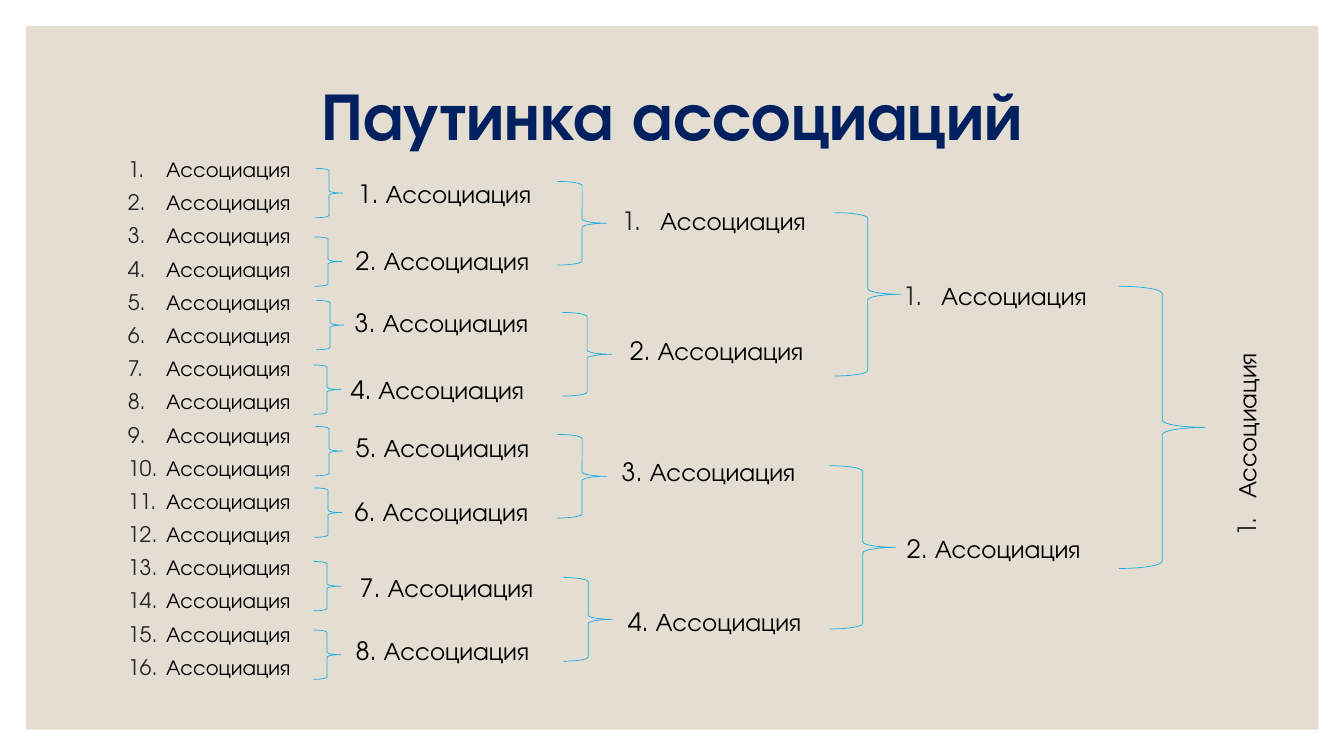
"""Builds the slide with a knockout web of associations."""
from lxml import etree
from pptx import Presentation
from pptx.dml.color import RGBColor
from pptx.enum.shapes import MSO_SHAPE
from pptx.enum.text import MSO_ANCHOR, PP_ALIGN
from pptx.oxml.ns import qn
from pptx.util import Emu, Pt

RECT, BRACE = MSO_SHAPE.RECTANGLE, MSO_SHAPE.RIGHT_BRACE
TOP, MID = MSO_ANCHOR.TOP, MSO_ANCHOR.MIDDLE
LEFT, CENTER = PP_ALIGN.LEFT, PP_ALIGN.CENTER

TITLE = "Паутинка ассоциаций"
WORD = "Ассоциация"
FONT = "TeX Gyre Adventor"
COLORS = {"panel": "E3DED1", "title": "002060", "text": "000000",
          "number": "262626", "brace": "1CADE4"}
COUNT = 16
INDENT = 38
PANEL = (26, 26, 1282, 698)
HEAD = (117, 43, 1100, 150)
LIST = (117, 155, 1100, 536)
LABEL = (273, 49)
FINAL = (1106, 383, 270, 49)
ROUNDS = [
    {"size": (27, 49), "auto": False,
     "braces": [(313, 167), (312, 235), (314, 298), (311, 362),
                (313, 423), (312, 484), (311, 557), (311, 625)],
     "labels": [(345, 172), (343, 238), (342, 300), (338, 366),
                (343, 424), (342, 487), (347, 563), (343, 625)]},
    {"size": (49, 83), "auto": True,
     "braces": [(553, 180), (558, 310), (553, 431), (559, 573)],
     "labels": [(607, 199), (615, 328), (607, 448), (613, 597)]},
    {"size": (66, 162), "auto": True,
     "braces": [(828, 211), (823, 462)],
     "labels": [(886, 273), (890, 524)]},
    {"size": (86, 280), "auto": True, "braces": [(1110, 284)], "labels": []},
]

PX = 9144


def emu(box):
    return [Emu(n * PX) for n in box]


def rgb(name):
    return RGBColor.from_string(COLORS[name])


def put(obj, form):
    for key, val in form.items():
        setattr(obj, key, val)


def number(para):
    props = para._p.get_or_add_pPr()
    props.set("marL", str(INDENT * PX))
    props.set("indent", str(-INDENT * PX))
    tint = etree.SubElement(props, qn("a:buClr"))
    etree.SubElement(tint, qn("a:srgbClr"), val=COLORS["number"])
    etree.SubElement(props, qn("a:buFont"), typeface="+mj-lt")
    etree.SubElement(props, qn("a:buAutoNum"), type="arabicPeriod")


def write(slide, box, lines, size=18, color="text", bold=False, auto=False,
          anchor=TOP, **form):
    shape = slide.shapes.add_textbox(*emu(box))
    frame = shape.text_frame
    put(frame, {"word_wrap": True, "vertical_anchor": anchor})
    frame.text = "\n".join(lines)
    for para in frame.paragraphs:
        put(para, {"alignment": LEFT, "space_before": Pt(9), **form})
        if auto:
            number(para)
        font = para.runs[0].font
        put(font, {"name": FONT, "size": Pt(size), "bold": bold})
        font.color.rgb = rgb(color)
    return shape


def draw(slide, kind, box):
    shape = slide.shapes.add_shape(kind, *emu(box))
    shape.shadow.inherit = False
    return shape


def main():
    deck = Presentation()
    put(deck, {"slide_width": Emu(12192000), "slide_height": Emu(6858000)})
    slide = deck.slides.add_slide(deck.slide_layouts[6])

    panel = draw(slide, RECT, PANEL)
    panel.fill.solid()
    panel.fill.fore_color.rgb = rgb("panel")
    panel.line.fill.background()

    write(slide, HEAD, [TITLE], 48, "title", True, anchor=MID,
          alignment=CENTER, line_spacing=0.9, space_before=Pt(0))
    write(slide, LIST, [WORD] * COUNT, 15.3, auto=True, line_spacing=0.8)

    for stage in ROUNDS:
        for spot in stage["braces"]:
            brace = draw(slide, BRACE, spot + stage["size"])
            brace.fill.background()
            brace.line.color.rgb = rgb("brace")
            brace.line.width = Pt(0.5)
        for num, spot in enumerate(stage["labels"], 1):
            auto = stage["auto"] and num == 1
            text = WORD if auto else f"{num}. {WORD}"
            write(slide, spot + LABEL, [text], auto=auto)

    write(slide, FINAL, [WORD], auto=True).rotation = 270
    deck.save("out.pptx")


if __name__ == "__main__":
    main()
